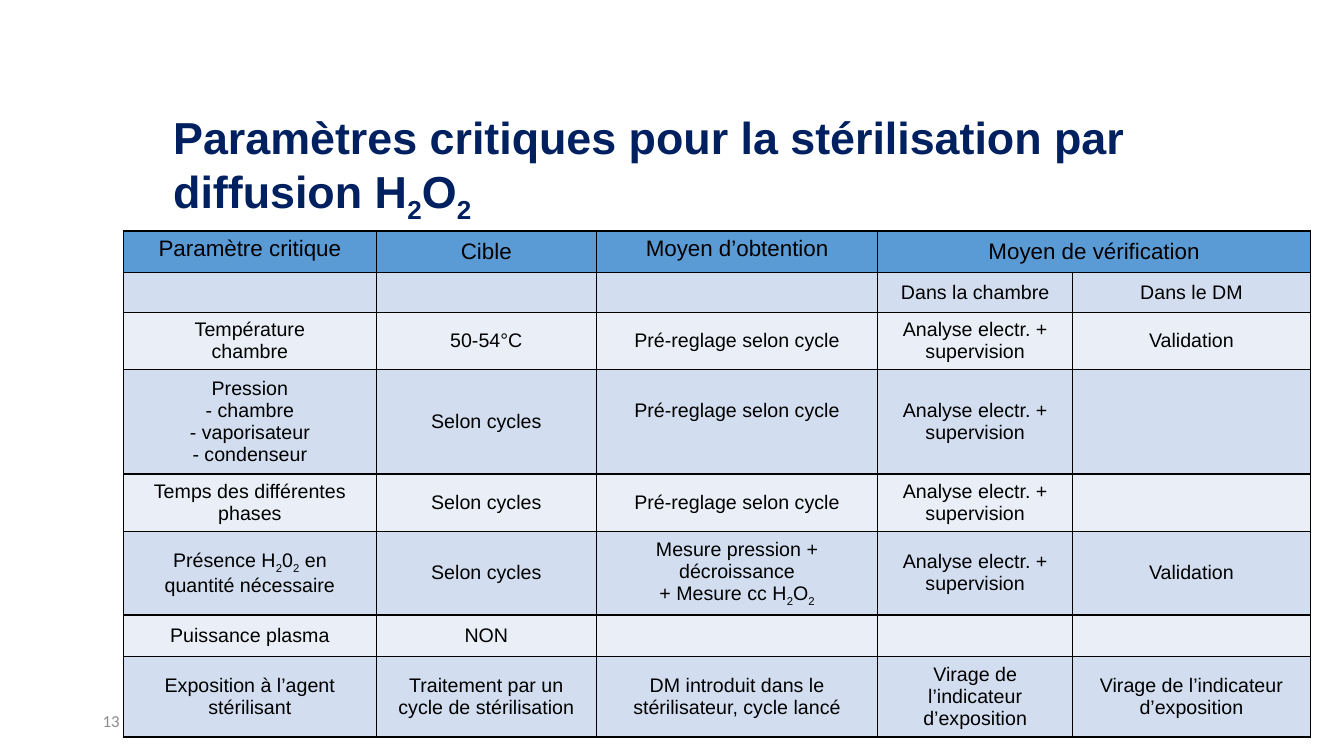
from lxml.etree import SubElement
from pptx import Presentation
from pptx.dml.color import RGBColor
from pptx.enum.text import MSO_ANCHOR, PP_ALIGN
from pptx.oxml.ns import qn
from pptx.util import Inches, Pt

NAVY = RGBColor(0x00, 0x20, 0x60)
BLACK = RGBColor(0x00, 0x00, 0x00)
GREY = RGBColor(0x8C, 0x8C, 0x8C)
BLUE = RGBColor(0x5B, 0x9B, 0xD5)
BANDS = (RGBColor(0xEA, 0xEF, 0xF7), RGBColor(0xD2, 0xDE, 0xEF))

PRESET = "Pré-reglage selon cycle"
PROBE = "Analyse electr. + supervision"
CYCLES = "Selon cycles"
TURN = "Virage de l’indicateur d’exposition"
ROWS = [
    ["Paramètre critique", "Cible", "Moyen d’obtention", "Moyen de vérification", ""],
    ["", "", "", "Dans la chambre", "Dans le DM"],
    ["Température\nchambre", "50-54°C", PRESET, PROBE, "Validation"],
    ["Pression\n- chambre\n- vaporisateur\n- condenseur", CYCLES, PRESET, PROBE, ""],
    ["Temps des différentes phases", CYCLES, PRESET, PROBE, ""],
    ["Présence H_2_0_2_ en quantité nécessaire", CYCLES,
     "Mesure pression + décroissance\n+ Mesure cc H_2_O_2_", PROBE, "Validation"],
    ["Puissance plasma", "NON", "", "", ""],
    ["Exposition à l’agent stérilisant", "Traitement par un cycle de stérilisation",
     "DM introduit dans le stérilisateur, cycle lancé", TURN, TURN],
]
WIDTHS = [30.1, 26.2, 33.5, 23.2, 28.3]
HEIGHTS = [4.9, 4.8, 6.5, 11.8, 6.5, 9.5, 4.9, 9.1]


class Board:
    def __init__(self, deck, cols=160, rows=90, font="Arial"):
        self.slide = deck.slides.add_slide(deck.slide_layouts[6])
        self.col = deck.slide_width / cols
        self.row = deck.slide_height / rows
        self.font = font

    def place(self, x, y, w, h):
        return [int(v) for v in (x * self.col, y * self.row, w * self.col, h * self.row)]

    def lines(self, frame, text, size, color, bold=False, align=PP_ALIGN.LEFT, font=None, space=1.0):
        frame.word_wrap = True
        for i, line in enumerate(text.split("\n")):
            para = frame.add_paragraph() if i else frame.paragraphs[0]
            para.alignment = align
            para.line_spacing = space
            for j, part in enumerate(line.split("_")):
                if not part:
                    continue
                run = para.add_run()
                run.text = part
                run.font.name = font or self.font
                run.font.size = Pt(size)
                run.font.bold = bold
                run.font.color.rgb = color
                if j % 2:
                    run.font._element.set("baseline", "-25000")

    def text(self, box, text, size, color, **style):
        frame = self.slide.shapes.add_textbox(*self.place(*box)).text_frame
        frame.vertical_anchor = MSO_ANCHOR.MIDDLE
        self.lines(frame, text, size, color, **style)

    def edge(self, cell):
        props = cell._tc.get_or_add_tcPr()
        for side in ("a:lnL", "a:lnR", "a:lnT", "a:lnB"):
            line = SubElement(props, qn(side), w=str(Pt(1)))
            fill = SubElement(line, qn("a:solidFill"))
            SubElement(fill, qn("a:srgbClr"), val=str(BLACK))

    def cell(self, cell, text, size, fill):
        self.edge(cell)
        cell.fill.solid()
        cell.fill.fore_color.rgb = fill
        cell.margin_left = cell.margin_right = Inches(0.13)
        cell.margin_top = cell.margin_bottom = Inches(0.05)
        cell.vertical_anchor = MSO_ANCHOR.MIDDLE
        if text:
            self.lines(cell.text_frame, text, size, BLACK, align=PP_ALIGN.CENTER)

    def table(self, x, y, widths, heights, rows):
        box = self.place(x, y, sum(widths), sum(heights))
        grid = self.slide.shapes.add_table(len(rows), len(widths), *box).table
        grid.first_row = grid.horz_banding = False
        for col, width in zip(grid.columns, widths):
            col.width = int(width * self.col)
        for row, height in zip(grid.rows, heights):
            row.height = int(height * self.row)
        for r, texts in enumerate(rows):
            for c, text in enumerate(texts):
                self.cell(grid.cell(r, c), text, 14 if r else 16, BANDS[r % 2] if r else BLUE)
        return grid


def main():
    deck = Presentation()
    deck.slide_width, deck.slide_height = Inches(13.33), Inches(7.5)
    board = Board(deck)
    board.text((19.44, 16.68, 132.24, 6.48), "Paramètres critiques pour la stérilisation par diffusion H_2_O_2_",
               32, NAVY, bold=True, space=0.9)
    grid = board.table(14.7, 27.5, WIDTHS, HEIGHTS, ROWS)
    grid.cell(0, 3).merge(grid.cell(0, 4))
    for c in (0, 2):
        grid.cell(0, c).vertical_anchor = MSO_ANCHOR.TOP
    grid.cell(3, 2).margin_bottom = Inches(0.27)
    board.text((11.04, 83.4, 36, 4.8), "13", 12, GREY, font="Calibri")
    deck.save("out.pptx")


if __name__ == "__main__":
    main()
